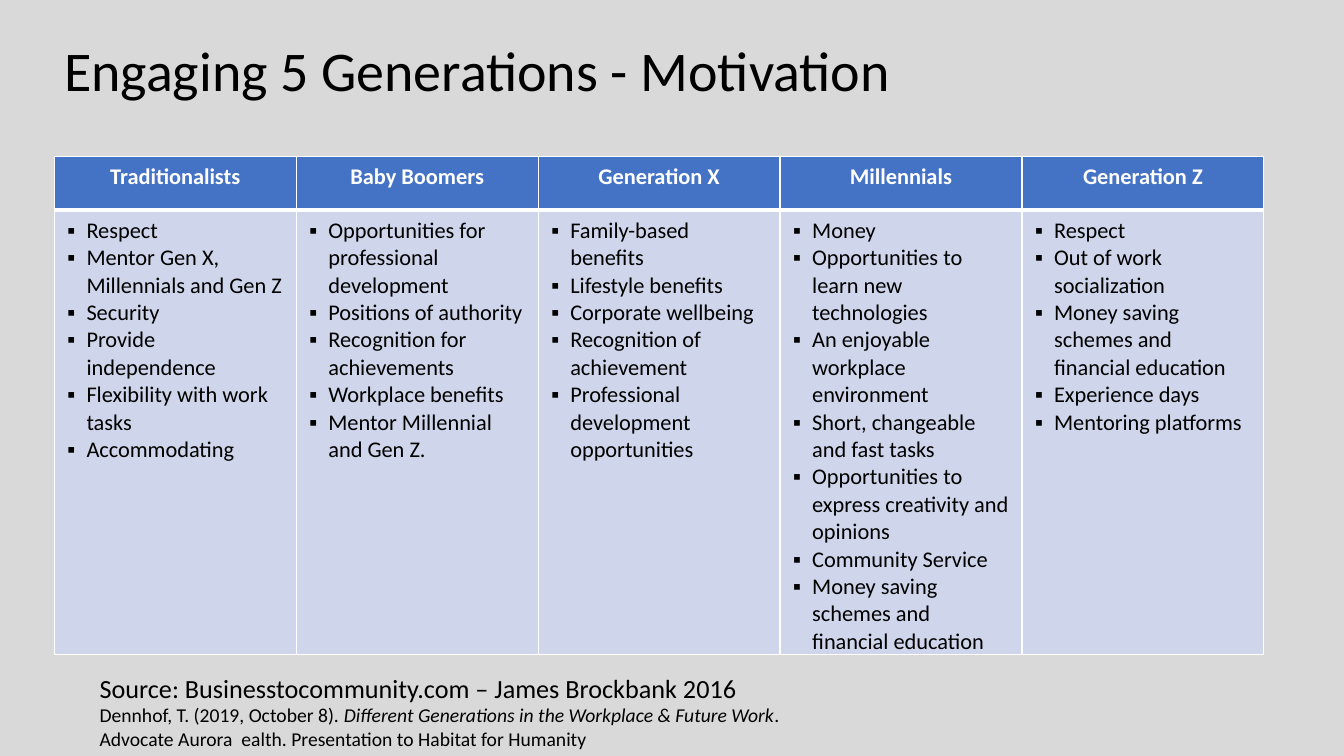
from lxml import etree
from pptx import Presentation
from pptx.dml.color import RGBColor
from pptx.enum.text import MSO_ANCHOR, PP_ALIGN
from pptx.oxml.ns import qn
from pptx.util import Cm, Pt

CENTER, LEFT = PP_ALIGN.CENTER, PP_ALIGN.LEFT
TOP, MIDDLE = MSO_ANCHOR.TOP, MSO_ANCHOR.MIDDLE

GREY = RGBColor(0xD9, 0xD9, 0xD9)
BLACK = RGBColor(0x00, 0x00, 0x00)
WHITE = RGBColor(0xFF, 0xFF, 0xFF)
BLUE = RGBColor(0x44, 0x72, 0xC4)
PALE_BLUE = RGBColor(0xCF, 0xD5, 0xEA)

TITLE_FORMAT = {"name": "Calibri", "size": Pt(40)}
HEADER_FORMAT = {"name": "Calibri", "size": Pt(16), "bold": True}
BODY_FORMAT = {"name": "Calibri", "size": Pt(16), "bold": False}
SOURCE_FORMAT = {"name": "Calibri", "size": Pt(18.7)}
CITATION_FORMAT = {"name": "Calibri", "size": Pt(14)}
CELL_MARGINS = {
    "margin_left": Cm(0.33), "margin_right": Cm(0.33),
    "margin_top": Cm(0.18), "margin_bottom": Cm(0.18),
}
HEADER_BORDERS = {"lnL": 1, "lnR": 1, "lnT": 1, "lnB": 3}
BODY_BORDERS = {"lnL": 1, "lnR": 1, "lnT": 3, "lnB": 1}
BULLET_INDENT = Cm(0.48)

MOTIVATIONS = {
    "Traditionalists": [
        "Respect", "Mentor Gen X, Millennials and Gen Z", "Security",
        "Provide independence", "Flexibility with work tasks", "Accommodating",
    ],
    "Baby Boomers": [
        "Opportunities for professional development", "Positions of authority",
        "Recognition for achievements", "Workplace benefits",
        "Mentor Millennial and Gen Z.",
    ],
    "Generation X": [
        "Family-based benefits", "Lifestyle benefits", "Corporate wellbeing",
        "Recognition of achievement", "Professional development opportunities",
    ],
    "Millennials": [
        "Money", "Opportunities to learn new technologies",
        "An enjoyable workplace environment", "Short, changeable and fast tasks",
        "Opportunities to express creativity and opinions", "Community Service",
        "Money saving schemes and financial education",
    ],
    "Generation Z": [
        "Respect", "Out of work socialization",
        "Money saving schemes and financial education", "Experience days",
        "Mentoring platforms",
    ],
}
CITATION = [
    ("Dennhof, T. (2019, October 8). ", False),
    ("Different Generations in the Workplace & Future Work", True),
    (". Advocate Aurora  ealth. Presentation to Habitat for Humanity", False),
]


def set_attributes(target, values):
    """Set every named attribute on the target."""
    for name, value in values.items():
        setattr(target, name, value)


def add_span(para, text, text_format, color=BLACK, italic=False):
    """Add a formatted run to a paragraph."""
    span = para.add_run()
    span.text = text
    set_attributes(span.font, {**text_format, "italic": italic})
    span.font.color.rgb = color


def add_text(slide, position, spans, text_format, anchor=TOP, wrap=True):
    """Add a text box holding one paragraph of (text, italic) spans."""
    frame = slide.shapes.add_textbox(*position).text_frame
    set_attributes(frame, {"word_wrap": wrap, "vertical_anchor": anchor})
    for text, italic in spans:
        add_span(frame.paragraphs[0], text, text_format, italic=italic)


def add_bullet(para):
    """Give a paragraph a small square bullet with a hanging indent."""
    properties = para._p.get_or_add_pPr()
    properties.set("marL", str(BULLET_INDENT))
    properties.set("indent", str(-BULLET_INDENT))
    etree.SubElement(properties, qn("a:buFont"), typeface="Calibri")
    etree.SubElement(properties, qn("a:buChar"), char="▪")


def add_borders(cell, widths):
    """Draw white cell borders with the given widths in points."""
    properties = cell._tc.get_or_add_tcPr()
    for side, width in widths.items():
        line = etree.SubElement(properties, qn(f"a:{side}"), w=str(Pt(width)))
        fill = etree.SubElement(line, qn("a:solidFill"))
        etree.SubElement(fill, qn("a:srgbClr"), val=str(WHITE))


def fill_cell(cell, lines, text_format, color, background, borders, bulleted):
    """Write the lines into a cell and style it."""
    set_attributes(cell, CELL_MARGINS)
    add_borders(cell, borders)
    cell.fill.solid()
    cell.fill.fore_color.rgb = background
    frame = cell.text_frame
    for index, text in enumerate(lines):
        para = frame.add_paragraph() if index else frame.paragraphs[0]
        para.alignment = LEFT if bulleted else CENTER
        if bulleted:
            add_bullet(para)
        add_span(para, text, text_format, color)


def add_motivation_table(slide):
    """Add the table with one column for each generation."""
    table = slide.shapes.add_table(
        2, len(MOTIVATIONS), Cm(1.37), Cm(3.94), Cm(30.48), Cm(12.52)
    ).table
    table.rows[0].height = Cm(1.35)
    table.rows[1].height = Cm(11.17)
    for column, (generation, motives) in enumerate(MOTIVATIONS.items()):
        fill_cell(table.cell(0, column), [generation], HEADER_FORMAT,
                  WHITE, BLUE, HEADER_BORDERS, False)
        fill_cell(table.cell(1, column), motives, BODY_FORMAT,
                  BLACK, PALE_BLUE, BODY_BORDERS, True)


def main():
    """Build the slide and save the deck."""
    deck = Presentation()
    deck.slide_width, deck.slide_height = Cm(33.87), Cm(19.05)
    page = deck.slides.add_slide(deck.slide_layouts[6])
    page.background.fill.solid()
    page.background.fill.fore_color.rgb = GREY

    add_text(page, (Cm(1.37), Cm(0.53), Cm(30.48), Cm(2.41)),
             [("Engaging 5 Generations - Motivation", False)],
             TITLE_FORMAT, anchor=MIDDLE)
    add_motivation_table(page)
    add_text(page, (Cm(2.26), Cm(16.81), Cm(16.66), Cm(1.07)),
             [("Source: Businesstocommunity.com – James Brockbank 2016", False)],
             SOURCE_FORMAT, wrap=False)
    add_text(page, (Cm(2.26), Cm(17.6), Cm(18.52), Cm(1.45)),
             CITATION, CITATION_FORMAT)
    deck.save("out.pptx")


if __name__ == "__main__":
    main()
